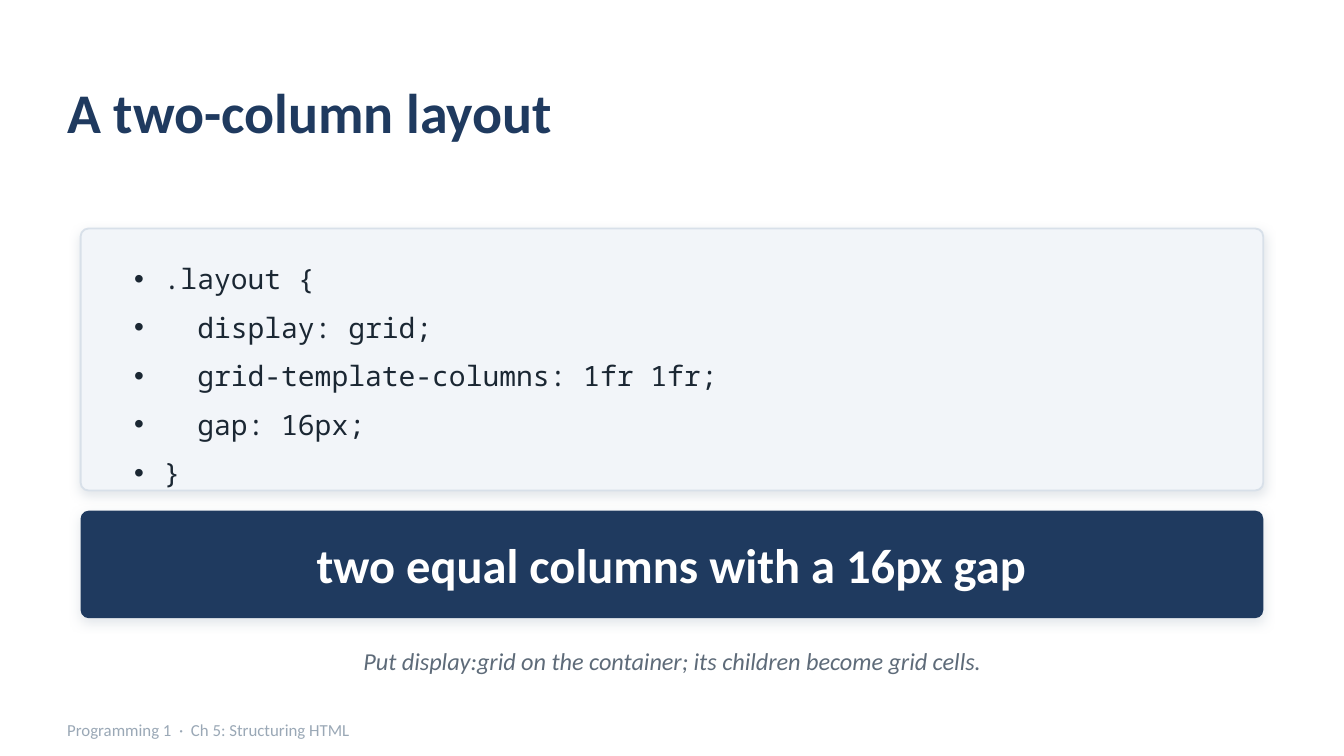
from dataclasses import dataclass

from lxml.etree import SubElement
from pptx import Presentation
from pptx.dml.color import RGBColor
from pptx.enum.shapes import MSO_SHAPE as Shape
from pptx.enum.text import MSO_ANCHOR as Anchor, MSO_AUTO_SIZE as AutoSize, PP_ALIGN as Align
from pptx.oxml.ns import qn
from pptx.util import Inches, Pt

CELL = Inches(0.1)  # the slide is a grid of 100 columns and 56.25 rows
COLUMNS, ROWS = 100, 56.25
MARGIN = 6
CONTENT_WIDTH = COLUMNS - 2 * MARGIN
CORNER = 0.6

CODE = (
    ".layout {",
    "  display: grid;",
    "  grid-template-columns: 1fr 1fr;",
    "  gap: 16px;",
    "}",
)


@dataclass(frozen=True)
class Theme:
    sans: str = "Calibri"
    mono: str = "Noto Sans Mono"
    bullet: str = "Arial"
    navy: str = "1F3A5F"
    panel: str = "F2F5F9"
    border: str = "D8E0E9"
    ink: str = "1B2733"
    muted: str = "5E6B79"
    pale: str = "9AA8B6"
    white: str = "FFFFFF"
    title_size: int = 30
    banner_size: int = 26
    code_size: int = 15
    note_size: int = 13
    footer_size: int = 9


THEME = Theme()


def cells(*counts):
    return [int(count * CELL) for count in counts]


def style(paragraph, size, color, face=THEME.sans, bold=False, italic=False, align=Align.LEFT):
    paragraph.alignment = align
    font = paragraph.font
    font.name, font.size = face, Pt(size)
    font.bold, font.italic = bold, italic
    font.color.rgb = RGBColor.from_string(color)


def write_line(shape, text, size, color, **options):
    """Set one vertically centred line with no insets."""
    frame = shape.text_frame
    frame.word_wrap = True
    frame.auto_size = AutoSize.NONE
    frame.vertical_anchor = Anchor.MIDDLE
    frame.margin_left = frame.margin_top = frame.margin_right = frame.margin_bottom = 0
    frame.text = text
    style(frame.paragraphs[0], size, color, **options)


def add_title(slide, text):
    title = slide.shapes.title
    title.left, title.top, title.width, title.height = cells(5, 4, 90, 8.5)
    write_line(title, text, THEME.title_size, THEME.navy, bold=True)


def add_label(slide, box, text, size, color, **options):
    write_line(slide.shapes.add_textbox(*cells(*box)), text, size, color, **options)


def add_soft_shadow(shape):
    shape.shadow.inherit = False
    effects = shape._element.spPr.find(qn("a:effectLst"))
    shadow = SubElement(effects, qn("a:outerShdw"), blurRad=str(Pt(6)), dist=str(Pt(2)),
                        dir=str(90 * 60000), algn="ctr", rotWithShape="0")
    tint = SubElement(shadow, qn("a:srgbClr"), val=THEME.pale)
    SubElement(tint, qn("a:alpha"), val="28000")


def add_card(slide, top, height, fill, border=None):
    card = slide.shapes.add_shape(Shape.ROUNDED_RECTANGLE,
                                  *cells(MARGIN, top, CONTENT_WIDTH, height))
    card.adjustments[0] = CORNER / height
    card.fill.solid()
    card.fill.fore_color.rgb = RGBColor.from_string(fill)
    if border:
        card.line.color.rgb = RGBColor.from_string(border)
        card.line.width = Pt(1)
    else:
        card.line.fill.background()
    add_soft_shadow(card)
    return card


def add_bullet(paragraph):
    properties = paragraph._p.get_or_add_pPr()
    indent = Inches(0.22)
    properties.set("marL", str(indent))
    properties.set("indent", str(-indent))
    SubElement(properties, qn("a:buFont"), typeface=THEME.bullet)
    SubElement(properties, qn("a:buChar"), char="•")


def add_code(slide, box, lines):
    frame = slide.shapes.add_textbox(*cells(*box)).text_frame
    frame.word_wrap = True
    frame.text = "\n".join(lines)
    for paragraph in frame.paragraphs:
        add_bullet(paragraph)
        paragraph.space_after = Pt(8)
        style(paragraph, THEME.code_size, THEME.ink, face=THEME.mono)


def main():
    deck = Presentation()
    deck.slide_width, deck.slide_height = cells(COLUMNS, ROWS)
    slide = deck.slides.add_slide(deck.slide_layouts[5])

    add_title(slide, "A two-column layout")
    add_card(slide, 17, 19.5, THEME.panel, THEME.border)
    add_code(slide, (MARGIN + 3, 19, CONTENT_WIDTH - 6, 16), CODE)
    banner = add_card(slide, 38, 8, THEME.navy)
    write_line(banner, "two equal columns with a 16px gap",
               THEME.banner_size, THEME.white, bold=True, align=Align.CENTER)
    add_label(slide, (MARGIN, 47.2, CONTENT_WIDTH, 4),
              "Put display:grid on the container; its children become grid cells.",
              THEME.note_size, THEME.muted, italic=True, align=Align.CENTER)
    add_label(slide, (5, 53, 80, 2.6), "Programming 1  ·  Ch 5: Structuring HTML",
              THEME.footer_size, THEME.pale)

    deck.save("out.pptx")


if __name__ == "__main__":
    main()
